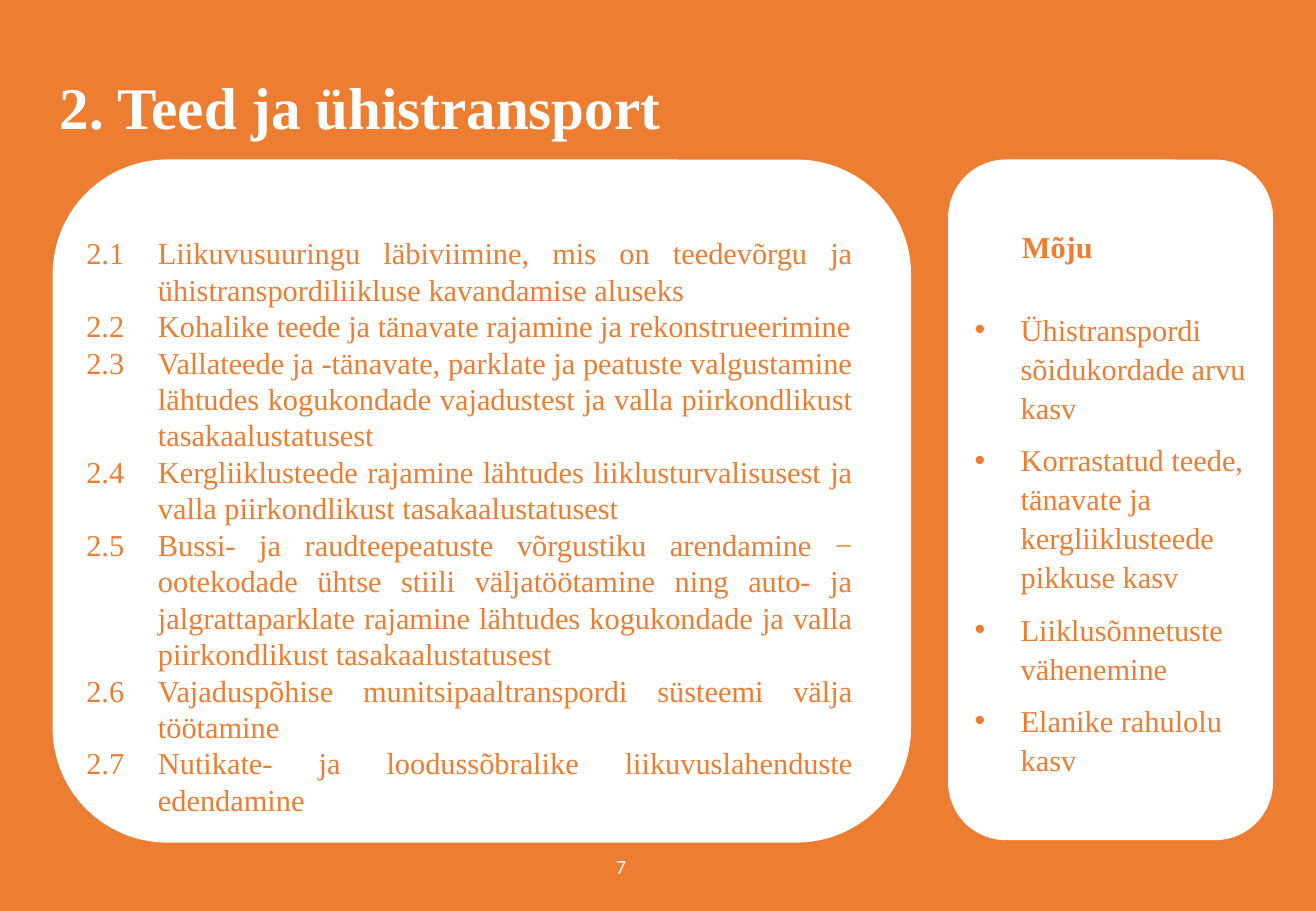
"""Build the slide on roads and public transport with its measures and impact."""
from lxml import etree
from pptx import Presentation
from pptx.dml.color import RGBColor
from pptx.enum.shapes import MSO_SHAPE
from pptx.enum.text import MSO_ANCHOR, PP_ALIGN
from pptx.oxml.ns import qn
from pptx.util import Inches, Pt

ROUND = MSO_SHAPE.ROUNDED_RECTANGLE
MIDDLE = MSO_ANCHOR.MIDDLE
LEFT, CENTER, JUSTIFY = PP_ALIGN.LEFT, PP_ALIGN.CENTER, PP_ALIGN.JUSTIFY

THEME = {
    "orange": RGBColor(0xED, 0x7D, 0x31),
    "white": RGBColor(0xFF, 0xFF, 0xFF),
    "serif": "Times New Roman",
    "sans": "Calibri",
    "title": Pt(35),
    "body": Pt(18),
    "page": Pt(12),
}

TASKS = [
    "Liikuvusuuringu läbiviimine, mis on teedevõrgu ja ühistranspordiliikluse kavandamise aluseks",
    "Kohalike teede ja tänavate rajamine ja rekonstrueerimine",
    "Vallateede ja -tänavate, parklate ja peatuste valgustamine lähtudes kogukondade "
    "vajadustest ja valla piirkondlikust tasakaalustatusest",
    "Kergliiklusteede rajamine lähtudes liiklusturvalisusest ja valla piirkondlikust "
    "tasakaalustatusest",
    "Bussi- ja raudteepeatuste võrgustiku arendamine − ootekodade ühtse stiili väljatöötamine "
    "ning auto- ja jalgrattaparklate rajamine lähtudes kogukondade ja valla piirkondlikust "
    "tasakaalustatusest",
    "Vajaduspõhise munitsipaaltranspordi süsteemi välja töötamine",
    "Nutikate- ja loodussõbralike liikuvuslahenduste edendamine",
]
GAINS = [
    "Ühistranspordi sõidukordade arvu kasv",
    "Korrastatud teede, tänavate ja kergliiklusteede pikkuse kasv",
    "Liiklusõnnetuste vähenemine",
    "Elanike rahulolu kasv",
]


def add_text(box, lines, size, color, font="serif", align=LEFT, wrap=True):
    """Add a text box with one paragraph per line and return its paragraphs."""
    frame = slide.shapes.add_textbox(*map(Inches, box)).text_frame
    frame.word_wrap = wrap
    frame.vertical_anchor = MIDDLE
    frame.margin_left = frame.margin_right = Inches(0.05)
    frame.margin_top = frame.margin_bottom = Inches(0.05)
    frame.text = "\n".join(lines)
    for para in frame.paragraphs:
        para.alignment = align
        for run in para.runs:
            run.font.name = THEME[font]
            run.font.size = THEME[size]
            run.font.color.rgb = THEME[color]
    return frame.paragraphs


def indent(para, left, first):
    """Set the left and first-line indents of a paragraph and return its properties."""
    props = para._p.get_or_add_pPr()
    props.set("marL", str(Inches(left)))
    props.set("indent", str(Inches(first)))
    return props


deck = Presentation()
deck.slide_width, deck.slide_height = Inches(10.83), Inches(7.5)
slide = deck.slides.add_slide(deck.slide_layouts[6])
slide.background.fill.solid()
slide.background.fill.fore_color.rgb = THEME["orange"]

for box, curve in [((0.44, 1.32, 7.05, 5.61), 0.167), ((7.81, 1.32, 2.66, 5.59), 0.177)]:
    panel = slide.shapes.add_shape(ROUND, *map(Inches, box))
    panel.adjustments[0] = curve
    panel.shadow.inherit = False
    panel.fill.solid()
    panel.fill.fore_color.rgb = THEME["white"]
    panel.line.color.rgb = THEME["white"]
    panel.line.width = Pt(1)

tasks = [f"2.{num}\t{task}" for num, task in enumerate(TASKS, 1)]
for para in add_text((0.66, 1.75, 6.41, 5.16), tasks, "body", "orange", align=JUSTIFY):
    indent(para, 0.59, -0.59)

head, *gains = add_text((7.97, 1.79, 2.34, 4.68), ["Mõju", *GAINS], "body", "orange")
for para in (head, *gains):
    para.line_spacing = 1.07
    para.space_after = Pt(8)
indent(head, 0.39, 0)
head.space_after = Pt(26)
head.runs[0].font.bold = True
for para in gains:
    props = indent(para, 0.38, -0.38)
    etree.SubElement(props, qn("a:buFont")).set("typeface", "Arial")
    etree.SubElement(props, qn("a:buChar")).set("char", "•")

title = add_text((0.44, 0.59, 9.96, 0.63), ["2. Teed ja ühistransport"], "title", "white")[0]
title.line_spacing = 0.9
title.runs[0].font.bold = True

add_text((5.01, 6.98, 0.2, 0.3), ["7"], "page", "white", "sans", CENTER, False)

deck.save("out.pptx")
